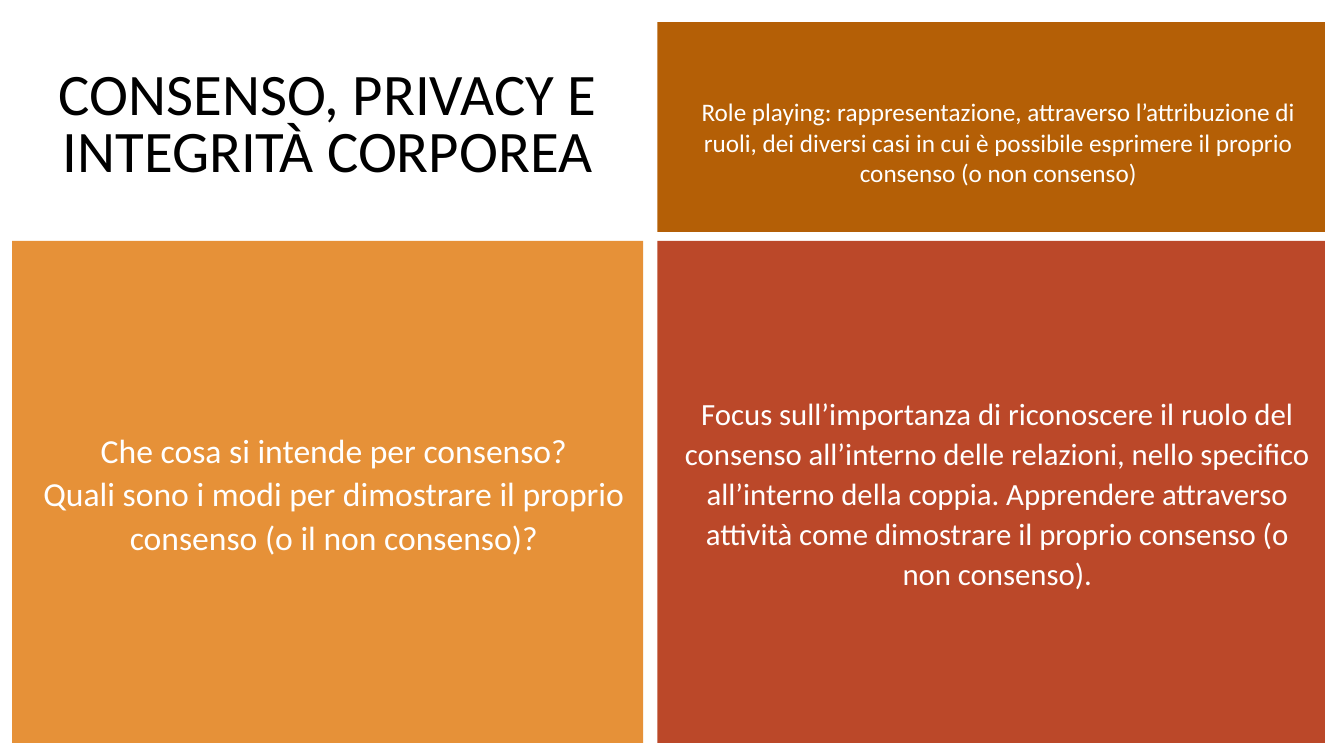
from lxml import etree
from pptx import Presentation
from pptx import util as u
from pptx.dml.color import RGBColor
from pptx.enum import shapes, text
from pptx.oxml.ns import qn

SLIDE_SIZE = (13.33, 7.5)
COLUMNS = [(0.12, 6.26), (6.52, 6.62)]  # left, width
ROWS = [(0.22, 2.08), (2.39, 4.98)]  # top, height


def cell_box(column, row):
    """Return left, top, width and height of a grid cell."""
    left, width = COLUMNS[column]
    top, height = ROWS[row]
    return [u.Inches(length) for length in (left, top, width, height)]


def paint(color_format, hex_color):
    color_format.rgb = RGBColor.from_string(hex_color)


def set_opacity(shape, percent):
    color = shape.fill._xPr.find(qn("a:solidFill"))[0]
    etree.SubElement(color, qn("a:alpha"), val=str(percent * 1000))


def write(shape, *lines, size, color="FFFFFF", spacing=1.0, insets=(0.22, 0.1, 0.1, 0.1)):
    """Fill a shape with centred paragraphs; insets are left, top, right, bottom."""
    frame = shape.text_frame
    frame.word_wrap = True
    frame.auto_size = text.MSO_AUTO_SIZE.NONE
    frame.vertical_anchor = text.MSO_ANCHOR.MIDDLE
    (frame.margin_left, frame.margin_top,
     frame.margin_right, frame.margin_bottom) = map(u.Inches, insets)
    frame.text = "\n".join(lines)
    for paragraph in frame.paragraphs:
        paragraph.alignment = text.PP_ALIGN.CENTER
        paragraph.line_spacing = spacing
        paragraph.space_before = u.Pt(0)
        for run in paragraph.runs:
            run.font.name = "Calibri"
            run.font.size = u.Pt(size)
            paint(run.font.color, color)


def add_panel(slide, column, row, fill, *lines, opacity=100, **text_format):
    panel = slide.shapes.add_shape(shapes.MSO_SHAPE.RECTANGLE, *cell_box(column, row))
    panel.shadow.inherit = False
    panel.line.fill.background()
    panel.fill.solid()
    paint(panel.fill.fore_color, fill)
    if opacity < 100:
        set_opacity(panel, opacity)
    write(panel, *lines, **text_format)


def set_title(slide, title_text):
    title = slide.shapes.title
    title.left, title.top, title.width, title.height = cell_box(0, 0)
    write(title, title_text, size=42, color="000000", spacing=0.8,
          insets=(0.1, 0.05, 0.1, 0.05))


def main():
    presentation = Presentation()
    presentation.slide_width, presentation.slide_height = map(u.Inches, SLIDE_SIZE)
    slide = presentation.slides.add_slide(presentation.slide_layouts[5])

    set_title(slide, "CONSENSO, PRIVACY E INTEGRITÀ CORPOREA")
    add_panel(slide, 1, 0, "B45F06",
              "Role playing: rappresentazione, attraverso l’attribuzione di ruoli, "
              "dei diversi casi in cui è possibile esprimere il proprio consenso "
              "(o non consenso)",
              size=18, insets=(0.24, 0.4, 0.1, 0.1))
    add_panel(slide, 0, 1, "E69138",
              "Che cosa si intende per consenso?",
              "Quali sono i modi per dimostrare il proprio consenso "
              "(o il non consenso)?",
              size=24, spacing=1.08)
    add_panel(slide, 1, 1, "B43512",
              "Focus sull’importanza di riconoscere il ruolo del consenso "
              "all’interno delle relazioni, nello specifico all’interno della coppia. "
              "Apprendere attraverso attività come dimostrare il proprio consenso "
              "(o non consenso).",
              size=22, spacing=1.08, opacity=90)

    presentation.save("out.pptx")


if __name__ == "__main__":
    main()
